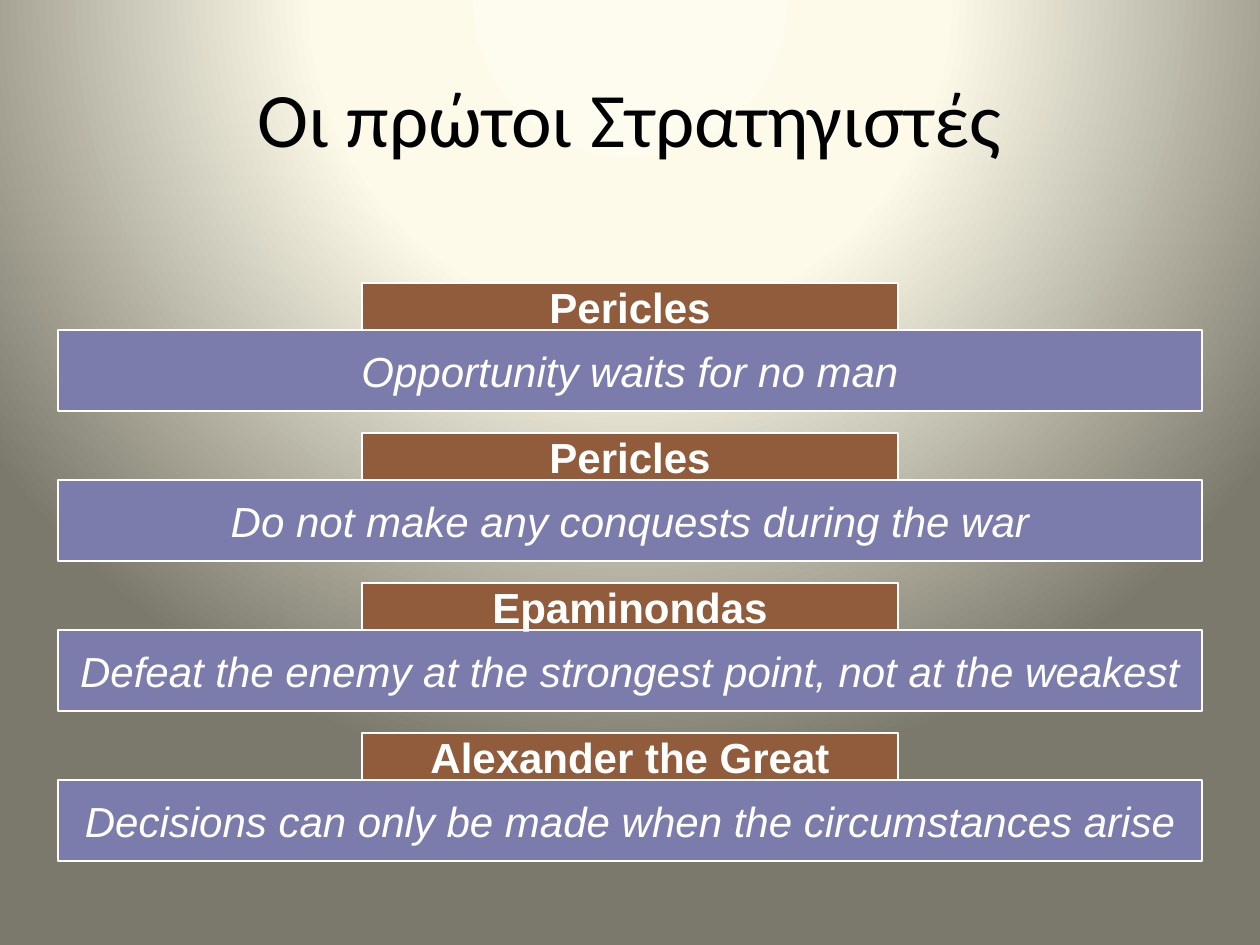
from dataclasses import dataclass

from lxml import etree
from pptx import Presentation
from pptx import util as u
from pptx.dml.color import RGBColor
from pptx.enum import shapes, text
from pptx.oxml.ns import qn
from pptx.slide import Slide
from pptx.text.text import TextFrame

PX_PER_INCH = 126
SLIDE_W, SLIDE_H = 1260, 945


@dataclass(frozen=True)
class Theme:
    title_font: str = "Calibri"
    bar_font: str = "Arial"
    title_size: int = 44
    bar_size: int = 24
    ink: str = "000000"
    white: str = "FFFFFF"
    name_fill: str = "905C3C"
    quote_fill: str = "7B7CAB"
    glow: tuple = ((0, "FEFCEE"), (40, "FDFAEA"), (100, "7B796B"))


@dataclass(frozen=True)
class Box:
    left: int
    top: int
    width: int
    height: int

    def emu(self) -> list[u.Emu]:
        return [px(n) for n in (self.left, self.top, self.width, self.height)]


@dataclass(frozen=True)
class Maxim:
    strategist: str
    quote: str


THEME = Theme()
TITLE_BOX = Box(63, 38, 1134, 158)
NAME_W, NAME_H = 536, 47
QUOTE_W, QUOTE_H = 1144, 81
FIRST_TOP, PITCH = 283, 150

MAXIMS = [
    Maxim("Pericles", "Opportunity waits for no man"),
    Maxim("Pericles", "Do not make any conquests during the war"),
    Maxim("Epaminondas", "Defeat the enemy at the strongest point, not at the weakest"),
    Maxim("Alexander the Great", "Decisions can only be made when the circumstances arise"),
]


def px(n: int) -> u.Emu:
    return u.Emu(round(n * u.Inches(1) / PX_PER_INCH))


def centred(top: int, width: int, height: int) -> Box:
    return Box((SLIDE_W - width) // 2, top, width, height)


def write(frame: TextFrame, words: str, font: str, size: int, color: str,
          bold: bool = False, italic: bool = False) -> None:
    frame.vertical_anchor = text.MSO_ANCHOR.MIDDLE
    line = frame.paragraphs[0]
    line.text = words
    line.alignment = text.PP_ALIGN.CENTER
    line.font.name = font
    line.font.size = u.Pt(size)
    line.font.color.rgb = RGBColor.from_string(color)
    line.font.bold = bold
    line.font.italic = italic


def paint_glow(slide: Slide) -> None:
    """Fill the background with a circular gradient centred above the slide."""
    slide.background.fill.gradient()
    gradient = next(slide.element.iter(qn("a:gradFill")))
    for child in list(gradient):
        gradient.remove(child)
    stops = etree.SubElement(gradient, qn("a:gsLst"))
    for percent, color in THEME.glow:
        stop = etree.SubElement(stops, qn("a:gs"), pos=str(percent * 1000))
        etree.SubElement(stop, qn("a:srgbClr"), val=color)
    circle = etree.SubElement(gradient, qn("a:path"), path="circle")
    etree.SubElement(circle, qn("a:fillToRect"),
                     l="50000", t="-80000", r="50000", b="180000")


def add_title(slide: Slide, words: str) -> None:
    title = slide.shapes.add_textbox(*TITLE_BOX.emu())
    title.text_frame.word_wrap = True
    write(title.text_frame, words, THEME.title_font, THEME.title_size, THEME.ink)


def add_bar(slide: Slide, box: Box, fill: str, words: str,
            bold: bool = False, italic: bool = False) -> None:
    bar = slide.shapes.add_shape(shapes.MSO_SHAPE.RECTANGLE, *box.emu())
    bar.shadow.inherit = False
    bar.fill.solid()
    bar.fill.fore_color.rgb = RGBColor.from_string(fill)
    bar.line.color.rgb = RGBColor.from_string(THEME.white)
    bar.line.width = u.Pt(0.75)
    bar.text_frame.word_wrap = False
    write(bar.text_frame, words, THEME.bar_font, THEME.bar_size, THEME.white,
          bold, italic)


def add_maxim(slide: Slide, maxim: Maxim, top: int) -> None:
    add_bar(slide, centred(top + NAME_H, QUOTE_W, QUOTE_H), THEME.quote_fill,
            maxim.quote, italic=True)
    add_bar(slide, centred(top, NAME_W, NAME_H), THEME.name_fill,
            maxim.strategist, bold=True)


def main() -> None:
    deck = Presentation()
    deck.slide_width, deck.slide_height = px(SLIDE_W), px(SLIDE_H)
    slide = deck.slides.add_slide(deck.slide_layouts[6])
    paint_glow(slide)
    add_title(slide, "Οι πρώτοι Στρατηγιστές")
    for row, maxim in enumerate(MAXIMS):
        add_maxim(slide, maxim, FIRST_TOP + row * PITCH)
    deck.save("out.pptx")


if __name__ == "__main__":
    main()
